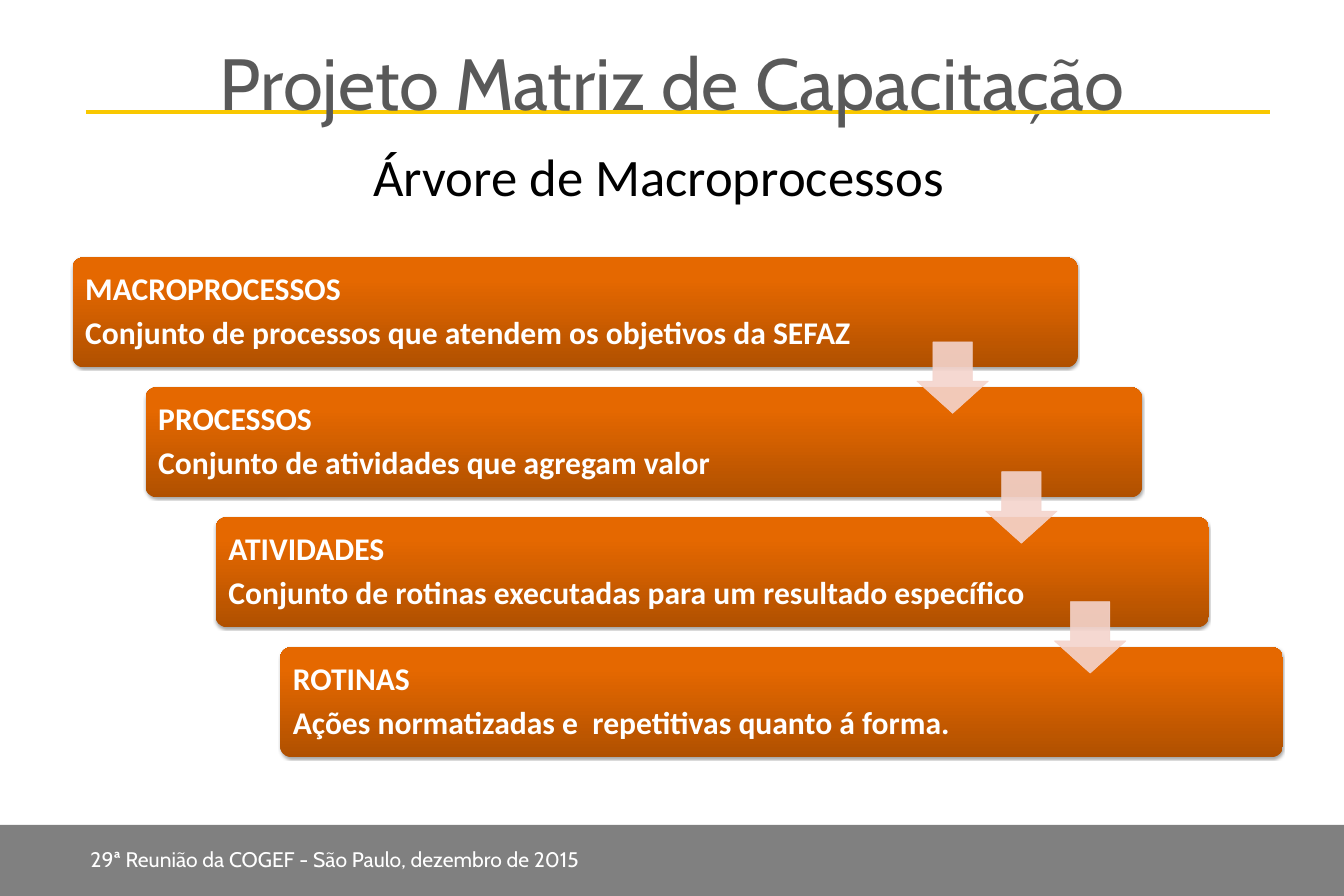
"""Build the slide with the cascading tree of macroprocesses."""
from dataclasses import dataclass

import lxml.etree
import pptx
import pptx.dml.color
import pptx.enum.shapes
import pptx.enum.text
import pptx.oxml.ns
import pptx.util

Inches = pptx.util.Inches
Pt = pptx.util.Pt
RGB = pptx.dml.color.RGBColor.from_string
qn = pptx.oxml.ns.qn
SHAPE = pptx.enum.shapes.MSO_SHAPE
ALIGN = pptx.enum.text.PP_ALIGN
ANCHOR = pptx.enum.text.MSO_ANCHOR


@dataclass(frozen=True)
class Theme:
    display: str = "Cabin"
    text: str = "Calibri"
    title_size: int = 110
    subtitle_size: int = 80
    step_size: int = 48
    footer_size: int = 32
    title: str = "595959"
    black: str = "000000"
    white: str = "FFFFFF"
    footer: str = "808080"
    rule: str = "F9C800"
    step_dark: str = "B05000"
    step_light: str = "E56800"
    arrow: str = "F4D4CC"


class Deck:
    def __init__(self, prs, theme):
        self.theme = theme
        self.s = prs.slides.add_slide(prs.slide_layouts[6])

    def shape(self, kind, box, adjustments=()):
        sp = self.s.shapes.add_shape(kind, *map(Inches, box))
        sp.shadow.inherit = False
        for i, value in enumerate(adjustments):
            sp.adjustments[i] = value
        return sp

    def run(self, p, text, font, size, color, bold=False):
        r = p.add_run()
        r.text = text
        r.font.name, r.font.size, r.font.bold = font, Pt(size), bold
        r.font.color.rgb = RGB(color)

    def band(self, box, color):
        sp = self.shape(SHAPE.RECTANGLE, box)
        sp.fill.solid()
        sp.fill.fore_color.rgb = RGB(color)
        sp.line.fill.background()

    def rule(self, left, right, y, color, width):
        sp = self.s.shapes.add_connector(
            pptx.enum.shapes.MSO_CONNECTOR.STRAIGHT,
            Inches(left), Inches(y), Inches(right), Inches(y))
        sp.line.color.rgb = RGB(color)
        sp.line.width = Pt(width)
        lxml.etree.SubElement(sp._element.spPr, qn("a:effectLst"))

    def label(self, box, text, font, size, color, align=ALIGN.LEFT, wrap=True):
        tf = self.s.shapes.add_textbox(*map(Inches, box)).text_frame
        tf.word_wrap = wrap
        p = tf.paragraphs[0]
        p.alignment = align
        self.run(p, text, font, size, color)

    def step(self, box, heading, detail):
        t = self.theme
        sp = self.shape(SHAPE.ROUNDED_RECTANGLE, box, [0.1])
        sp.line.fill.background()
        sp.fill.gradient()
        sp.fill.gradient_angle = 90
        stops = ((0, t.step_dark), (0.8, t.step_light))
        for stop, (position, color) in zip(sp.fill.gradient_stops, stops):
            stop.position = position
            stop.color.rgb = RGB(color)
        self.drop_shadow(sp)
        tf = sp.text_frame
        tf.word_wrap = True
        tf.vertical_anchor = ANCHOR.MIDDLE
        tf.margin_left = tf.margin_right = Inches(0.2)
        tf.margin_top = tf.margin_bottom = Inches(0.2)
        tf.paragraphs[0].space_after = Pt(16)
        for p, text in ((tf.paragraphs[0], heading), (tf.add_paragraph(), detail)):
            p.alignment = ALIGN.LEFT
            p.line_spacing = 0.9
            self.run(p, text, t.text, t.step_size, t.white, bold=True)

    def drop_shadow(self, sp):
        effects = sp._element.spPr.find(qn("a:effectLst"))
        shadow = lxml.etree.SubElement(
            effects, qn("a:outerShdw"), blurRad=str(Pt(3.1)),
            dist=str(Pt(1.8)), dir="5400000", rotWithShape="0")
        color = lxml.etree.SubElement(shadow, qn("a:srgbClr"), val=self.theme.black)
        lxml.etree.SubElement(color, qn("a:alpha"), val="35000")

    def arrow(self, box):
        sp = self.shape(SHAPE.DOWN_ARROW, box, [0.55, 0.45])
        sp.fill.solid()
        sp.fill.fore_color.rgb = RGB(self.theme.arrow)
        sp.line.color.rgb = RGB(self.theme.arrow)
        sp.line.width = Pt(0.75)
        for color in sp._element.spPr.iter(qn("a:srgbClr")):
            lxml.etree.SubElement(color, qn("a:alpha"), val="90000")


STEPS = (
    (1.53, 21.2, "MACROPROCESSOS",
     "Conjunto de processos que atendem os objetivos da SEFAZ"),
    (3.07, 21.02, "PROCESSOS", "Conjunto de atividades que agregam valor"),
    (4.55, 20.95, "ATIVIDADES",
     "Conjunto de rotinas executadas para um resultado específico"),
    (5.91, 21.15, "ROTINAS", "Ações normatizadas e  repetitivas quanto á forma."),
)
STEP_TOP, STEP_HEIGHT, STEP_PITCH = 5.43, 2.32, 2.74
ARROW_LEFT, ARROW_TOP, ARROW_PITCH, ARROW_SIZE = 19.34, 7.21, 1.45, 1.51


def main():
    prs = pptx.Presentation()
    prs.slide_width, prs.slide_height = Inches(28.35), Inches(18.9)
    t = Theme()
    deck = Deck(prs, t)
    deck.band((0, 17.4, 28.35, 1.5), t.footer)
    deck.rule(1.81, 26.78, 2.36, t.rule, 6)
    deck.label((1.81, 17.8, 17.25, 0.63),
               "29ª Reunião da COGEF - São Paulo, dezembro de 2015",
               t.display, t.footer_size, t.white)
    deck.label((1.42, 0.76, 25.52, 1.37), "Projeto Matriz de Capacitação",
               t.display, t.title_size, t.title, ALIGN.CENTER)
    deck.label((7.72, 2.99, 12.36, 1.45), "Árvore de Macroprocessos",
               t.text, t.subtitle_size, t.black, ALIGN.CENTER, wrap=False)
    for i, (left, width, heading, detail) in enumerate(STEPS):
        deck.step((left, STEP_TOP + i * STEP_PITCH, width, STEP_HEIGHT),
                  heading, detail)
    for i in range(len(STEPS) - 1):
        deck.arrow((ARROW_LEFT + i * ARROW_PITCH, ARROW_TOP + i * STEP_PITCH,
                    ARROW_SIZE, ARROW_SIZE))
    prs.save("out.pptx")


if __name__ == "__main__":
    main()
